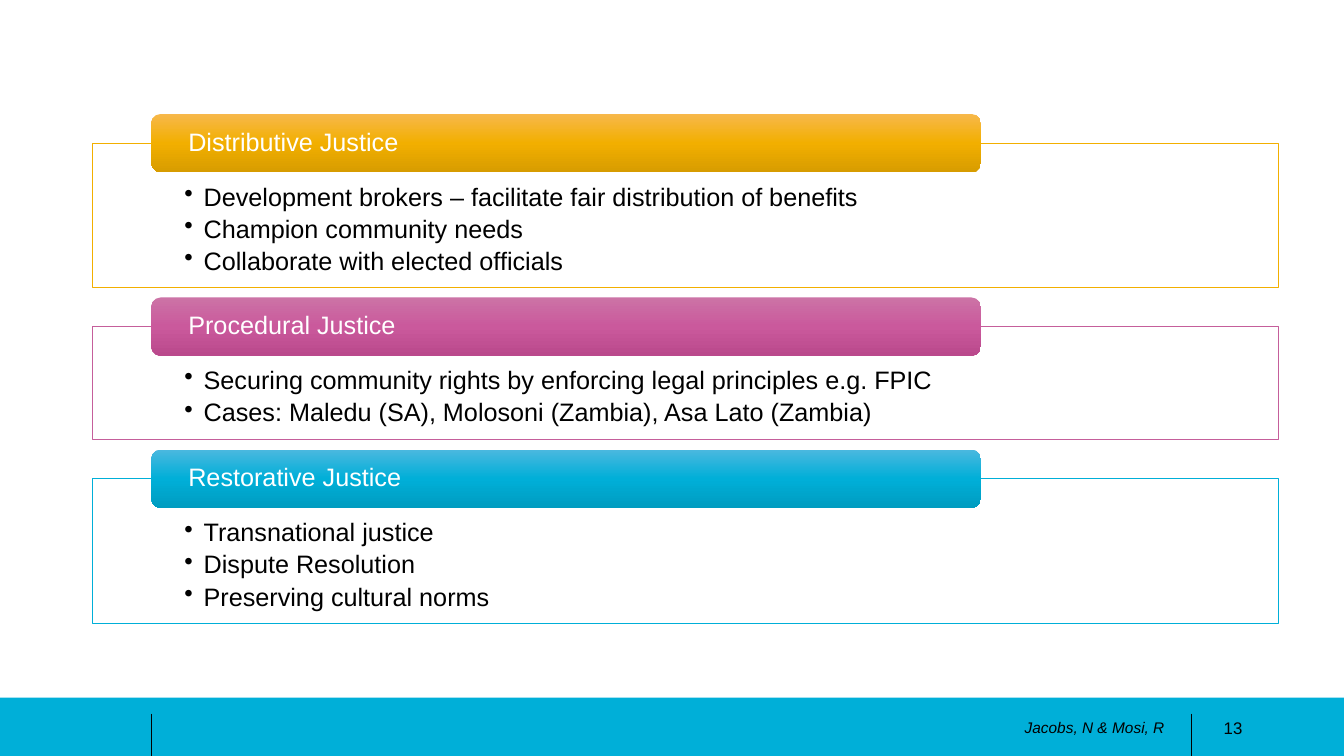
import copy

import pptx
import pptx.dml.color
import pptx.enum.shapes
import pptx.enum.text
import pptx.oxml
import pptx.oxml.ns
import pptx.util

RGB = pptx.dml.color.RGBColor
Inches, Pt = pptx.util.Inches, pptx.util.Pt
KIND = pptx.enum.shapes.MSO_SHAPE
ALIGN = pptx.enum.text.PP_ALIGN
ANCHOR = pptx.enum.text.MSO_ANCHOR
qn = pptx.oxml.ns.qn

WHITE = RGB(255, 255, 255)
BLACK = RGB(0, 0, 0)
GOLD = RGB(0xF2, 0xAF, 0x00)
PINK = RGB(0xC5, 0x5E, 0x9B)
CYAN = RGB(0x00, 0xAF, 0xD8)
GOLDS = (RGB(0xF7, 0xB8, 0x4B), GOLD, RGB(0xD7, 0x9C, 0x00))
PINKS = (RGB(0xCC, 0x73, 0xA6), RGB(0xCA, 0x59, 0x9C), RGB(0xBA, 0x49, 0x8C))
CYANS = (RGB(0x4B, 0xB8, 0xDF), CYAN, RGB(0x00, 0x9C, 0xC0))

WIDE, HIGH = 13.33, 7.5
LEFT, SPAN = 0.92, 11.76   # frame column
TAB, TABW, TABH = 1.5, 8.23, 0.58   # heading column
ROW, PAD, GAP = 0.31, 0.5, 0.39   # text line, frame padding, gap between frames

BODY = {"size": Pt(18), "name": "Arial"}
PARTS = [
    ("Distributive Justice", GOLD, GOLDS, [
        "Development brokers – facilitate fair distribution of benefits",
        "Champion community needs",
        "Collaborate with elected officials"]),
    ("Procedural Justice", PINK, PINKS, [
        "Securing community rights by enforcing legal principles e.g. FPIC",
        "Cases: Maledu (SA), Molosoni (Zambia), Asa Lato (Zambia)"]),
    ("Restorative Justice", CYAN, CYANS, [
        "Transnational justice",
        "Dispute Resolution",
        "Preserving cultural norms"]),
]


def shape(slide, kind, box):
    item = slide.shapes.add_shape(kind, *map(Inches, box))
    item.shadow.inherit = False
    item.line.fill.background()
    return item


def frame(item, anchor, insets):
    text = item.text_frame
    sides = ("margin_left", "margin_top", "margin_right", "margin_bottom")
    looks = dict(zip(sides, map(Inches, insets)))
    looks.update(word_wrap=True, vertical_anchor=anchor)
    for key, value in looks.items():
        setattr(text, key, value)
    return text


def write(para, words, color, looks, align=ALIGN.LEFT):
    para.alignment = align
    run = para.add_run()
    run.text = words
    for key, value in looks.items():
        setattr(run.font, key, value)
    run.font.color.rgb = color


def bullet(para):
    props = para._p.get_or_add_pPr()
    props.set("marL", str(Inches(0.19)))
    props.set("indent", str(-Inches(0.19)))
    mark = pptx.oxml.parse_xml(
        '<a:buChar xmlns:a="http://schemas.openxmlformats.org/drawingml/2006/main" char="•"/>')
    props.append(mark)


def shade(item, colors):
    item.fill.gradient()
    item.fill.gradient_angle = 270
    stops = next(item.element.iter(qn("a:gsLst")))
    stops.append(copy.deepcopy(stops[0]))
    for stop, color, place in zip(item.fill.gradient_stops, colors, (0, 0.5, 1)):
        stop.color.rgb = color
        stop.position = place


def panel(slide, top, high, part):
    title, edge, colors, lines = part
    # Outlined frame with bullets
    box = shape(slide, KIND.RECTANGLE, (LEFT, top, SPAN, high))
    box.fill.solid()
    box.fill.fore_color.rgb = WHITE
    box.line.color.rgb = edge
    box.line.width = Pt(0.5)
    text = frame(box, ANCHOR.TOP, (0.91, 0.41, 0.91, 0.14))
    for num, words in enumerate(lines):
        para = text.add_paragraph() if num else text.paragraphs[0]
        bullet(para)
        para.line_spacing = 0.9
        para.space_after = Pt(3.5)
        write(para, words, BLACK, BODY)
    # Heading tab centred on the top edge
    tab = shape(slide, KIND.ROUNDED_RECTANGLE, (TAB, top - TABH / 2, TABW, TABH))
    shade(tab, colors)
    text = frame(tab, ANCHOR.MIDDLE, (0.34, 0, 0.34, 0))
    text.paragraphs[0].line_spacing = 0.9
    write(text.paragraphs[0], title, WHITE, BODY)


def footer(slide, top):
    bar = shape(slide, KIND.RECTANGLE, (0, top, WIDE, HIGH - top))
    bar.fill.solid()
    bar.fill.fore_color.rgb = CYAN
    # Dividers
    for x in (TAB, 11.82):
        ends = map(Inches, (x, top + 0.16, x, HIGH))
        rule = slide.shapes.add_connector(pptx.enum.shapes.MSO_CONNECTOR.STRAIGHT, *ends)
        rule.line.color.rgb = BLACK
        rule.line.width = Pt(0.5)
        rule.element.spPr.append(pptx.oxml.parse_xml(
            '<a:effectLst xmlns:a="http://schemas.openxmlformats.org/drawingml/2006/main"/>'))
    # Authors and page number
    notes = [("Jacobs, N & Mosi, R", 7.62, 4.03, {"size": Pt(11), "italic": True}),
             ("13", 11.83, 0.59, {"size": Pt(12)})]
    for words, x, wide, looks in notes:
        note = slide.shapes.add_textbox(*map(Inches, (x, top + 0.1, wide, 0.4)))
        text = frame(note, ANCHOR.MIDDLE, (0.1, 0.05, 0.1, 0.05))
        write(text.paragraphs[0], words, BLACK, {"name": "Arial", **looks}, ALIGN.RIGHT)


def main():
    deck = pptx.Presentation()
    deck.slide_width, deck.slide_height = Inches(WIDE), Inches(HIGH)
    slide = deck.slides.add_slide(deck.slide_layouts[6])
    footer(slide, 6.92)
    top = 1.42
    for part in PARTS:
        high = PAD + ROW * len(part[3])
        panel(slide, top, high, part)
        top += high + GAP
    deck.save("out.pptx")


if __name__ == "__main__":
    main()
